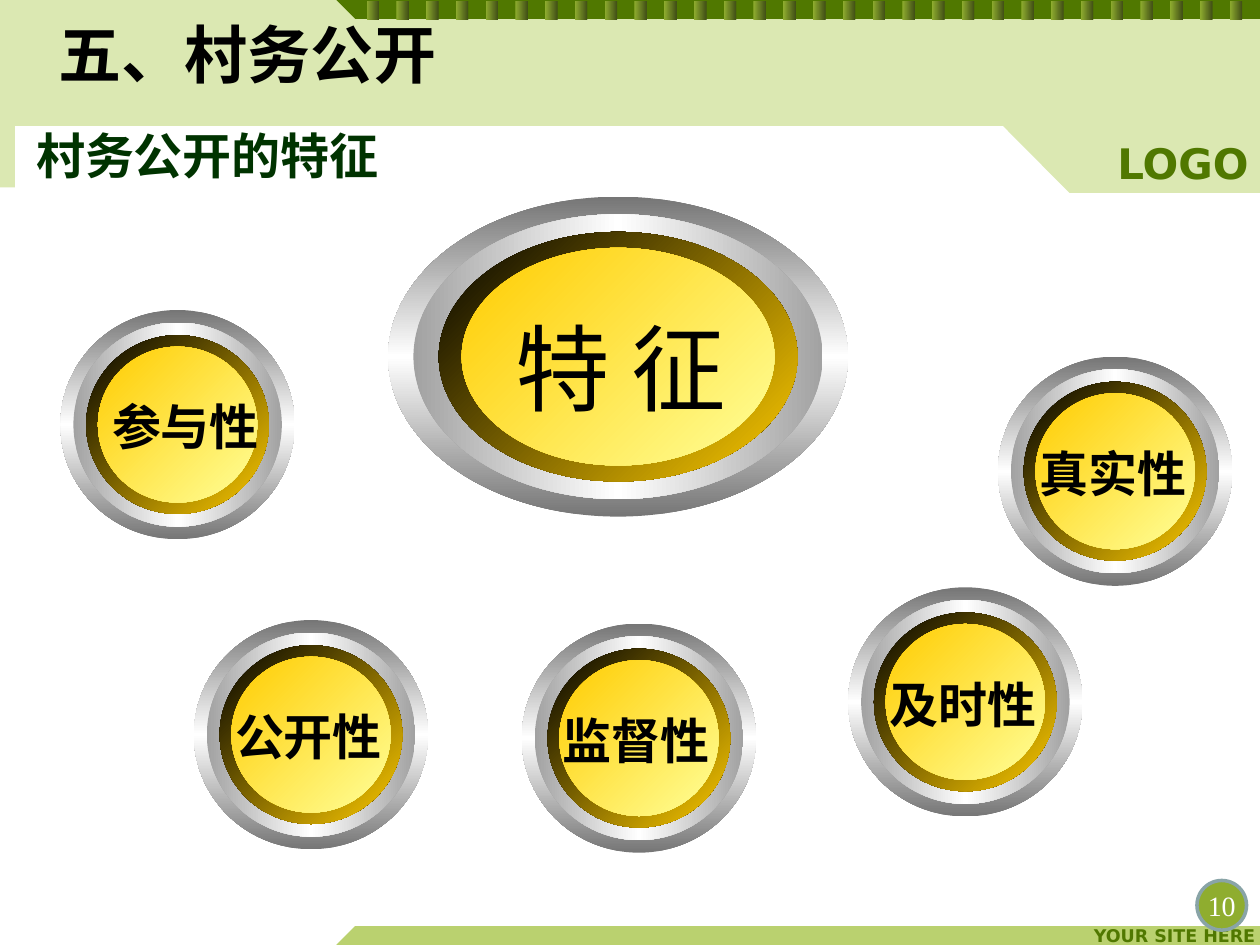
from dataclasses import dataclass

from lxml import etree
from pptx import Presentation
from pptx.dml.color import RGBColor
from pptx.enum.shapes import MSO_SHAPE
from pptx.enum.text import MSO_ANCHOR, PP_ALIGN
from pptx.oxml.ns import qn
from pptx.util import Cm, Pt

OVAL, RECTANGLE = MSO_SHAPE.OVAL, MSO_SHAPE.RECTANGLE
LEFT, CENTER, RIGHT = PP_ALIGN.LEFT, PP_ALIGN.CENTER, PP_ALIGN.RIGHT
TOP, MIDDLE = MSO_ANCHOR.TOP, MSO_ANCHOR.MIDDLE


@dataclass(frozen=True)
class Theme:
    pale_green: str = "DBE8B2"
    light_green: str = "BAD16F"
    green: str = "8FAD2F"
    dark_green: str = "507800"
    deep_green: str = "425016"
    heading_green: str = "003300"
    badge_line: str = "89A4A7"
    black: str = "000000"
    white: str = "FFFFFF"
    steel: str = "767676"
    silver: str = "A2A2A2"
    gold: str = "FFCC00"
    lemon: str = "FFFF99"
    chinese: str = "Noto Sans CJK SC"
    serif: str = "Times New Roman"
    sans: str = "DejaVu Sans"
    hub_size: int = 54
    title_size: int = 36
    heading_size: int = 28
    logo_size: int = 24
    number_size: int = 16
    footer_size: int = 10


THEME = Theme()


def write_text(shape, text, size, font, color, bold=True, align=LEFT,
               anchor=TOP, insets=(0.25, 0.13)):
    frame = shape.text_frame
    frame.word_wrap = True
    frame.vertical_anchor = anchor
    frame.margin_left = frame.margin_right = Cm(insets[0])
    frame.margin_top = frame.margin_bottom = Cm(insets[1])
    paragraph = frame.paragraphs[0]
    paragraph.alignment = align
    run = paragraph.add_run()
    run.text = text
    run.font.size = Pt(size)
    run.font.name = font
    run.font.bold = bold
    run.font.color.rgb = RGBColor.from_string(color)
    # Chinese glyphs take the East Asian typeface
    east_asian = etree.SubElement(run._r.get_or_add_rPr(), qn("a:ea"))
    east_asian.set("typeface", THEME.chinese)


def add_gradient_shape(shapes, kind, left, top, width, height, colors, angle):
    shape = shapes.add_shape(kind, Cm(left), Cm(top), Cm(width), Cm(height))
    shape.shadow.inherit = False
    shape.line.fill.background()
    shape.fill.gradient()
    gradient = shape._element.spPr.find(qn("a:gradFill"))
    stops = gradient.find(qn("a:gsLst"))
    for stop in list(stops):
        stops.remove(stop)
    for index, color in enumerate(colors):
        position = 100000 * index // (len(colors) - 1)
        stop = etree.SubElement(stops, qn("a:gs"), pos=str(position))
        etree.SubElement(stop, qn("a:srgbClr"), val=color)
    gradient.find(qn("a:lin")).set("ang", str(angle * 60000))


presentation = Presentation()
presentation.slide_width, presentation.slide_height = Cm(25.4), Cm(19.05)
slide = presentation.slides.add_slide(presentation.slide_layouts[6])
shapes = slide.shapes

# Footer strip, header panel and top band
BANDS = [
    (THEME.light_green, [(6.78, 19.05), (7.16, 18.67), (25.4, 18.67), (25.4, 19.05)]),
    (THEME.pale_green, [(0, 3.78), (0.3, 3.78), (0.3, 2.54), (20.22, 2.54),
                        (21.56, 3.89), (25.4, 3.89), (25.4, 0), (0, 0)]),
    (THEME.dark_green, [(6.78, 0), (7.16, 0.38), (25.4, 0.38), (25.4, 0)]),
]
for color, corners in BANDS:
    points = [(Cm(x), Cm(y)) for x, y in corners]
    builder = shapes.build_freeform(*points[0])
    builder.add_line_segments(points[1:], close=True)
    band = builder.convert_to_shape()
    band.shadow.inherit = False
    band.line.fill.background()
    band.fill.solid()
    band.fill.fore_color.rgb = RGBColor.from_string(color)

# Small bars along the top band
bars = shapes.add_group_shape()
for index in range(30):
    add_gradient_shape(bars.shapes, RECTANGLE, 7.39 + 0.6 * index, 0.03, 0.25, 0.37,
                       (THEME.green, THEME.deep_green), 0)

# Footer, logo word, title and heading
site = shapes.add_textbox(Cm(21.72), Cm(18.62), Cm(3.63), Cm(0.48))
write_text(site, "YOUR SITE HERE", THEME.footer_size, THEME.sans, THEME.dark_green,
           align=RIGHT, insets=(0.05, 0.03))
logo = shapes.add_textbox(Cm(22.25), Cm(2.74), Cm(3.2), Cm(1.09))
write_text(logo, "LOGO", THEME.logo_size, THEME.sans, THEME.dark_green,
           align=CENTER, anchor=MIDDLE, insets=(0.05, 0.03))
title = shapes.add_textbox(Cm(0.94), Cm(0.1), Cm(22.83), Cm(1.96))
write_text(title, "五、村务公开", THEME.title_size, THEME.chinese, THEME.black,
           anchor=MIDDLE)
heading = shapes.add_textbox(Cm(0.48), Cm(2.41), Cm(24.36), Cm(14.68))
write_text(heading, "村务公开的特征", THEME.heading_size, THEME.chinese,
           THEME.heading_green)

# Buttons: four concentric ovals each, from the rim to the face
RINGS = [
    (1, (THEME.steel, THEME.white, THEME.steel), 90),
    (0.89, (THEME.silver, THEME.white, THEME.silver), 0),
    (0.78, (THEME.black, THEME.gold), 45),
    (0.68, (THEME.gold, THEME.lemon), 45),
]
HUB = (9.27, 6.45)
SMALL = (4.72, 4.62)
# Label, centre, button size, label offset from the centre, label box size
BUTTONS = [
    ("特 征", (12.46, 7.19), HUB, (-2.68, -1.07), (5.46, 2.57)),
    ("参与性", (3.58, 8.56), SMALL, (-1.57, -0.69), (3.63, 1.45)),
    ("监督性", (12.88, 14.88), SMALL, (-1.78, -0.69), (4.14, 1.45)),
    ("真实性", (22.48, 9.5), SMALL, (-1.78, -0.69), (4.14, 1.45)),
    ("及时性", (19.46, 14.15), SMALL, (-1.78, -0.69), (4.14, 1.45)),
    ("公开性", (6.27, 14.81), SMALL, (-1.78, -0.69), (4.14, 1.45)),
]
for text, (x, y), size, (dx, dy), (box_width, box_height) in BUTTONS:
    button = shapes.add_group_shape()
    for ratio, colors, angle in RINGS:
        width, height = size[0] * ratio, size[1] * ratio
        add_gradient_shape(button.shapes, OVAL, x - width / 2, y - height / 2,
                           width, height, colors, angle)
    label = button.shapes.add_textbox(Cm(x + dx), Cm(y + dy),
                                      Cm(box_width), Cm(box_height))
    if size == HUB:
        write_text(label, text, THEME.hub_size, THEME.chinese, THEME.black,
                   bold=False, align=CENTER)
    else:
        write_text(label, text, THEME.heading_size, THEME.serif, THEME.black)

# Page number badge
badge = shapes.add_shape(OVAL, Cm(24.13), Cm(17.75), Cm(1), Cm(1))
badge.shadow.inherit = False
badge.fill.solid()
badge.fill.fore_color.rgb = RGBColor.from_string(THEME.green)
badge.line.color.rgb = RGBColor.from_string(THEME.badge_line)
badge.line.width = Pt(2)
write_text(badge, "10", THEME.number_size, THEME.serif, THEME.white, bold=False,
           align=CENTER, anchor=MIDDLE, insets=(0, 0))

presentation.save("out.pptx")
